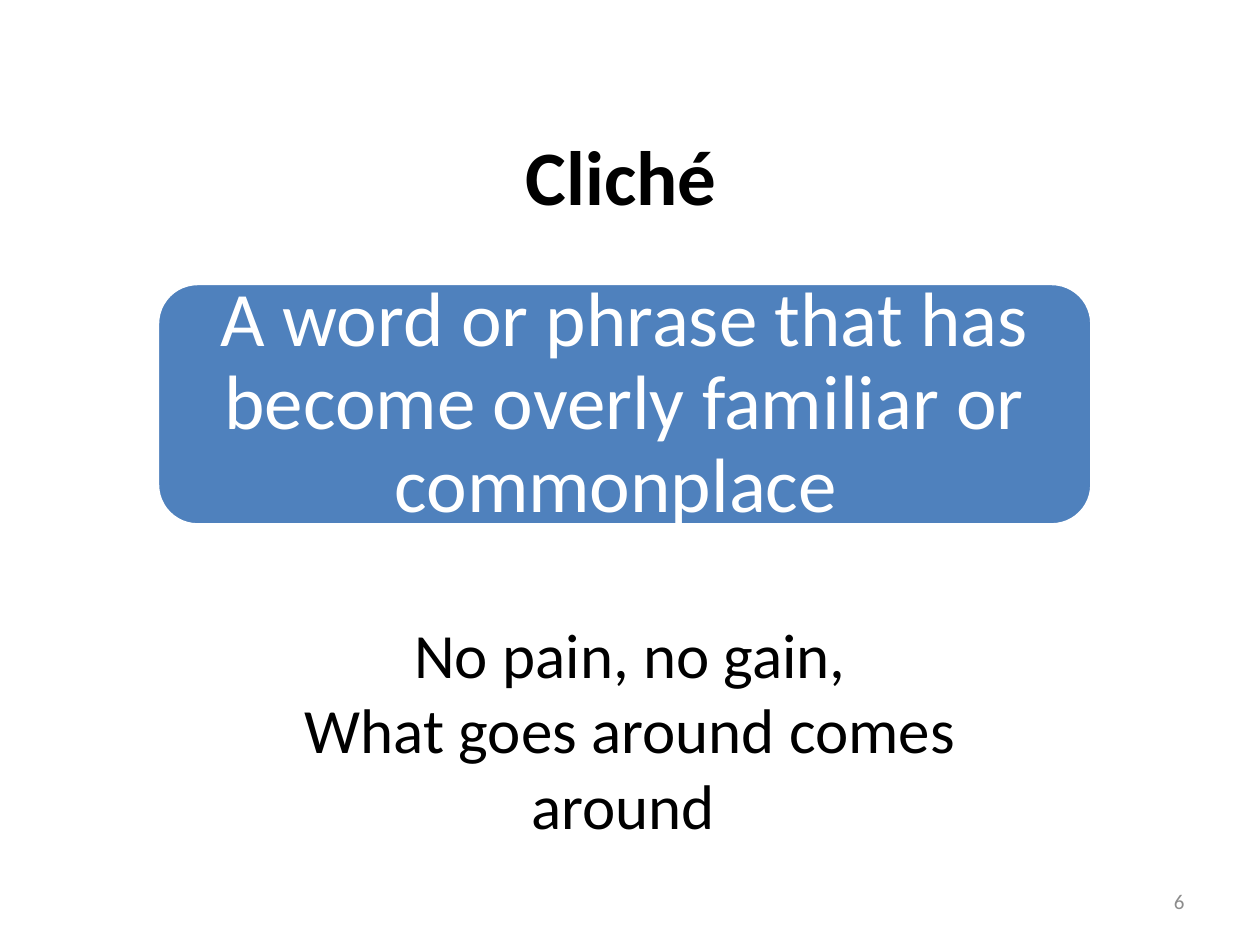
from dataclasses import dataclass

from pptx import Presentation
from pptx.dml.color import RGBColor
from pptx.enum.shapes import MSO_SHAPE
from pptx.enum.text import MSO_ANCHOR, PP_ALIGN
from pptx.util import Pt

ROUND = MSO_SHAPE.ROUNDED_RECTANGLE
TOP, MIDDLE = MSO_ANCHOR.TOP, MSO_ANCHOR.MIDDLE
CENTER, RIGHT = PP_ALIGN.CENTER, PP_ALIGN.RIGHT

FONT = "Calibri"
COLORS = {"black": "000000", "white": "FFFFFF", "blue": "4F81BD", "gray": "8C8C8C"}


@dataclass
class Label:
    box: tuple[float, float, float, float]
    lines: list[str]
    size: float
    color: str = "black"
    bold: bool = False
    align: PP_ALIGN = CENTER
    anchor: MSO_ANCHOR = MIDDLE
    inset: tuple[float, float] = (7.2, 3.6)
    spacing: float = 1.0


PANEL = (90, 162, 534, 138)
LABELS = [
    Label((54, 42, 612, 116), ["Cliché "], 44, bold=True),
    Label((96.5, 168.5, 521, 125),
          ["A word or phrase that has become overly familiar or commonplace "],
          44, "white", inset=(13.2, 13.2), spacing=0.9),
    Label((120, 348, 480, 138),
          ["No pain, no gain,", "What goes around comes around "], 36, anchor=TOP),
    Label((516, 500.5, 168, 28.75), ["6"], 12, "gray", align=RIGHT),
]


def rgb(name: str) -> RGBColor:
    return RGBColor.from_string(COLORS[name])


def draw_panel(slide) -> None:
    panel = slide.shapes.add_shape(ROUND, *map(Pt, PANEL))
    panel.shadow.inherit = False
    panel.fill.solid()
    panel.fill.fore_color.rgb = rgb("blue")
    panel.line.color.rgb = rgb("white")
    panel.line.width = Pt(2)


def draw_label(slide, label: Label) -> None:
    frame = slide.shapes.add_textbox(*map(Pt, label.box)).text_frame
    frame.word_wrap = True
    frame.vertical_anchor = label.anchor
    side, edge = map(Pt, label.inset)
    frame.margin_left = frame.margin_right = side
    frame.margin_top = frame.margin_bottom = edge
    for i, line in enumerate(label.lines):
        para = frame.add_paragraph() if i else frame.paragraphs[0]
        para.alignment = label.align
        para.line_spacing = label.spacing
        run = para.add_run()
        run.text = line
        run.font.name = FONT
        run.font.size = Pt(label.size)
        run.font.bold = label.bold
        run.font.color.rgb = rgb(label.color)


def main() -> None:
    deck = Presentation()
    deck.slide_width, deck.slide_height = Pt(720), Pt(540)
    slide = deck.slides.add_slide(deck.slide_layouts[6])
    draw_panel(slide)
    for label in LABELS:
        draw_label(slide, label)
    deck.save("out.pptx")


if __name__ == "__main__":
    main()
